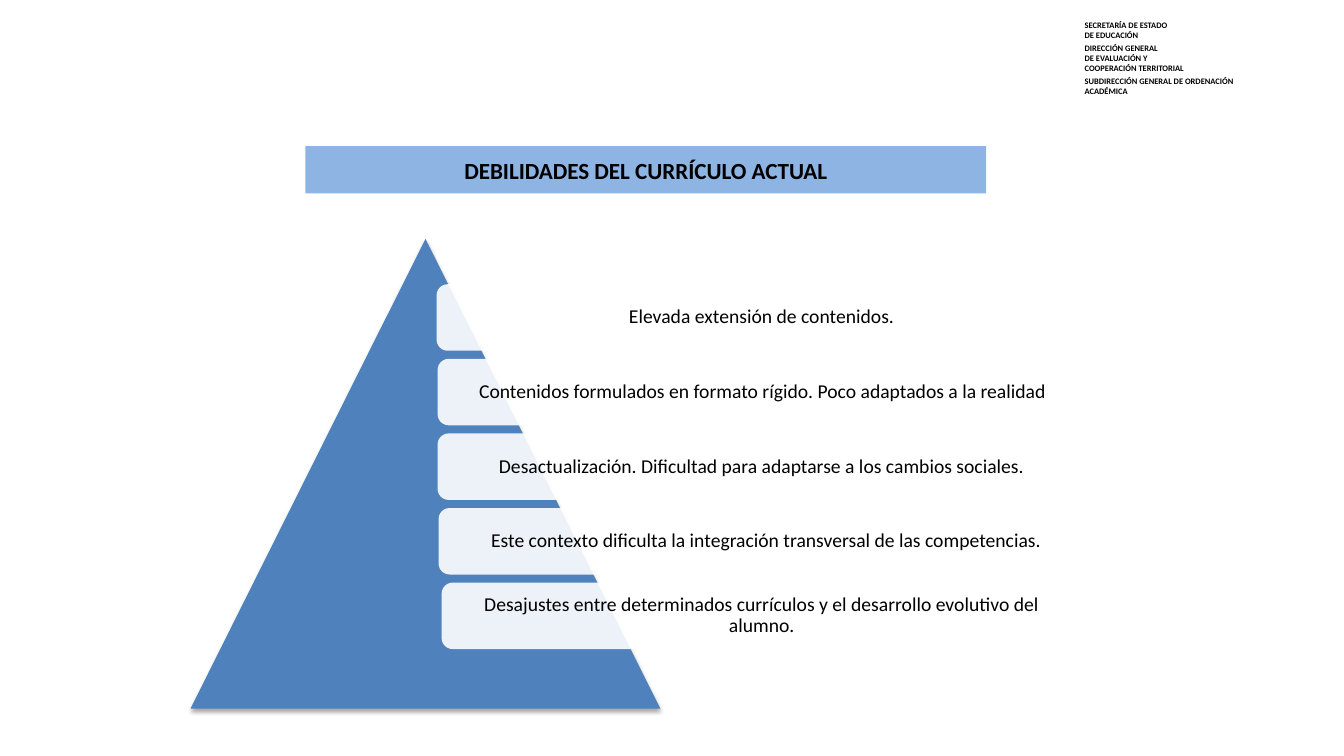
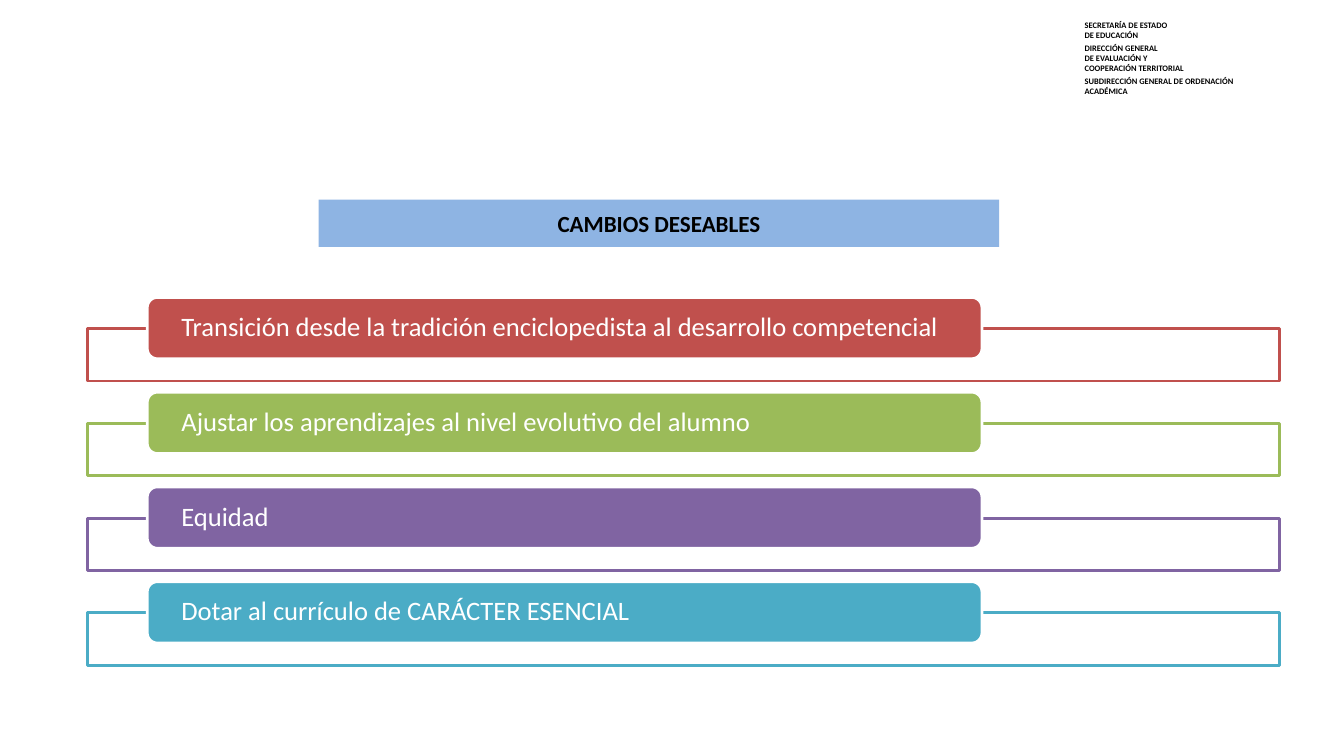
"""Two slides on the weaknesses of the curriculum and the changes wanted."""
from lxml.etree import SubElement
from pptx import Presentation
from pptx.dml.color import RGBColor
from pptx.enum.shapes import MSO_SHAPE
from pptx.enum.text import MSO_ANCHOR, PP_ALIGN
from pptx.oxml.ns import qn
from pptx.util import Inches, Pt

FONT = "Calibri"
BLACK = RGBColor(0x00, 0x00, 0x00)
WHITE = RGBColor(0xFF, 0xFF, 0xFF)
BAND = RGBColor(0x8E, 0xB4, 0xE3)
BLUE = RGBColor(0x4F, 0x81, 0xBD)
RED = RGBColor(0xC0, 0x50, 0x4D)
GREEN = RGBColor(0x9B, 0xBB, 0x59)
PURPLE = RGBColor(0x80, 0x64, 0xA2)
TEAL = RGBColor(0x4B, 0xAC, 0xC6)

OFFICE = [
    ["SECRETARÍA DE ESTADO", "DE EDUCACIÓN"],
    ["DIRECCIÓN GENERAL", "DE EVALUACIÓN Y", "COOPERACIÓN TERRITORIAL"],
    ["SUBDIRECCIÓN GENERAL DE ORDENACIÓN ACADÉMICA"],
]
FLAWS = [
    ("Elevada extensión de contenidos.", 4.33, 6.45),
    ("Contenidos formulados en formato rígido. Poco adaptados a la realidad", 4.34, 6.45),
    ("Desactualización. Dificultad para adaptarse a los cambios sociales.", 4.34, 6.43),
    ("Este contexto dificulta la integración transversal de las competencias.", 4.35, 6.5),
    ("Desajustes entre determinados currículos y el desarrollo evolutivo del alumno.", 4.38, 6.35),
]
GOALS = [
    ("Transición desde la tradición enciclopedista al desarrollo competencial", RED),
    ("Ajustar los aprendizajes al nivel evolutivo del alumno", GREEN),
    ("Equidad", PURPLE),
    ("Dotar al currículo de CARÁCTER ESENCIAL", TEAL),
]


def write(shape, groups, size, color=BLACK, bold=False, align=PP_ALIGN.LEFT,
          anchor=MSO_ANCHOR.MIDDLE, inset=(0.1, 0.05), gap=0, lead=None):
    """Fill a shape with groups of lines, set apart by a gap in points."""
    frame = shape.text_frame
    frame.word_wrap = True
    frame.vertical_anchor = anchor
    frame.margin_left = frame.margin_right = Inches(inset[0])
    frame.margin_top = frame.margin_bottom = Inches(inset[1])
    para = None
    for group in groups:
        for num, line in enumerate(group):
            first = para is None
            para = frame.paragraphs[0] if first else frame.add_paragraph()
            para.alignment = align
            if lead:
                para.line_spacing = lead
            if gap and num == 0 and not first:
                para.space_before = Pt(gap)
            run = para.add_run()
            run.text = line
            font = run.font
            font.name, font.size, font.bold = FONT, Pt(size), bold
            font.color.rgb = color


def draw(slide, kind, box, fill, line=None, alpha=None):
    """Add a flat shape with a solid fill."""
    shape = slide.shapes.add_shape(kind, *map(Inches, box))
    shape.shadow.inherit = False
    shape.fill.solid()
    shape.fill.fore_color.rgb = fill
    if alpha:
        tint = shape._element.spPr.find(qn("a:solidFill"))[0]
        SubElement(tint, qn("a:alpha"), val=str(alpha * 1000))
    if line is None:
        shape.line.fill.background()
    else:
        shape.line.color.rgb = line
        shape.line.width = Pt(2)
    return shape


def shade(shape):
    """Give a shape a soft shadow below."""
    effects = shape._element.spPr.find(qn("a:effectLst"))
    outer = SubElement(effects, qn("a:outerShdw"), blurRad=str(Pt(3.1)),
                       dist=str(Pt(1.8)), dir="5400000", rotWithShape="0")
    tint = SubElement(outer, qn("a:srgbClr"), val=str(BLACK))
    SubElement(tint, qn("a:alpha"), val="35000")


def start(deck, title, left, top):
    """Add a slide with the office name and the title band."""
    slide = deck.slides.add_slide(deck.slide_layouts[6])
    office = slide.shapes.add_textbox(*map(Inches, (10.66, 0.15, 2.04, 0.86)))
    write(office, OFFICE, 6, bold=True, anchor=MSO_ANCHOR.TOP, gap=2)
    band = draw(slide, MSO_SHAPE.RECTANGLE, (left, top, 6.75, 0.47), BAND)
    write(band, [[title]], 16.5, bold=True, align=PP_ALIGN.CENTER)
    return slide


def flaws(deck):
    """Build the pyramid of weaknesses."""
    slide = start(deck, "DEBILIDADES DEL CURRÍCULO ACTUAL", 3.03, 1.45)
    shade(draw(slide, MSO_SHAPE.ISOSCELES_TRIANGLE, (1.89, 2.37, 4.66, 4.66), BLUE))
    for row, (text, left, width) in enumerate(FLAWS):
        box = (left, 2.82 + row * 0.74, width, 0.66)
        card = draw(slide, MSO_SHAPE.ROUNDED_RECTANGLE, box, WHITE, alpha=90)
        write(card, [[text]], 14, align=PP_ALIGN.CENTER, inset=(0.1, 0.06), lead=0.9)


def goals(deck):
    """Build the list of changes wanted."""
    slide = start(deck, "CAMBIOS DESEABLES", 3.16, 1.98)
    for row, (text, color) in enumerate(GOALS):
        top = 2.95 + row * 0.94
        draw(slide, MSO_SHAPE.RECTANGLE, (0.87, top + 0.31, 11.82, 0.52), WHITE, color, 90)
        label = draw(slide, MSO_SHAPE.ROUNDED_RECTANGLE, (1.46, top, 8.28, 0.61), color, WHITE)
        write(label, [[text]], 19, WHITE, inset=(0.31, 0), lead=0.9)


def main():
    """Build and save the deck."""
    deck = Presentation()
    deck.slide_width, deck.slide_height = Inches(13.33), Inches(7.5)
    flaws(deck)
    goals(deck)
    deck.save("out.pptx")


if __name__ == "__main__":
    main()
